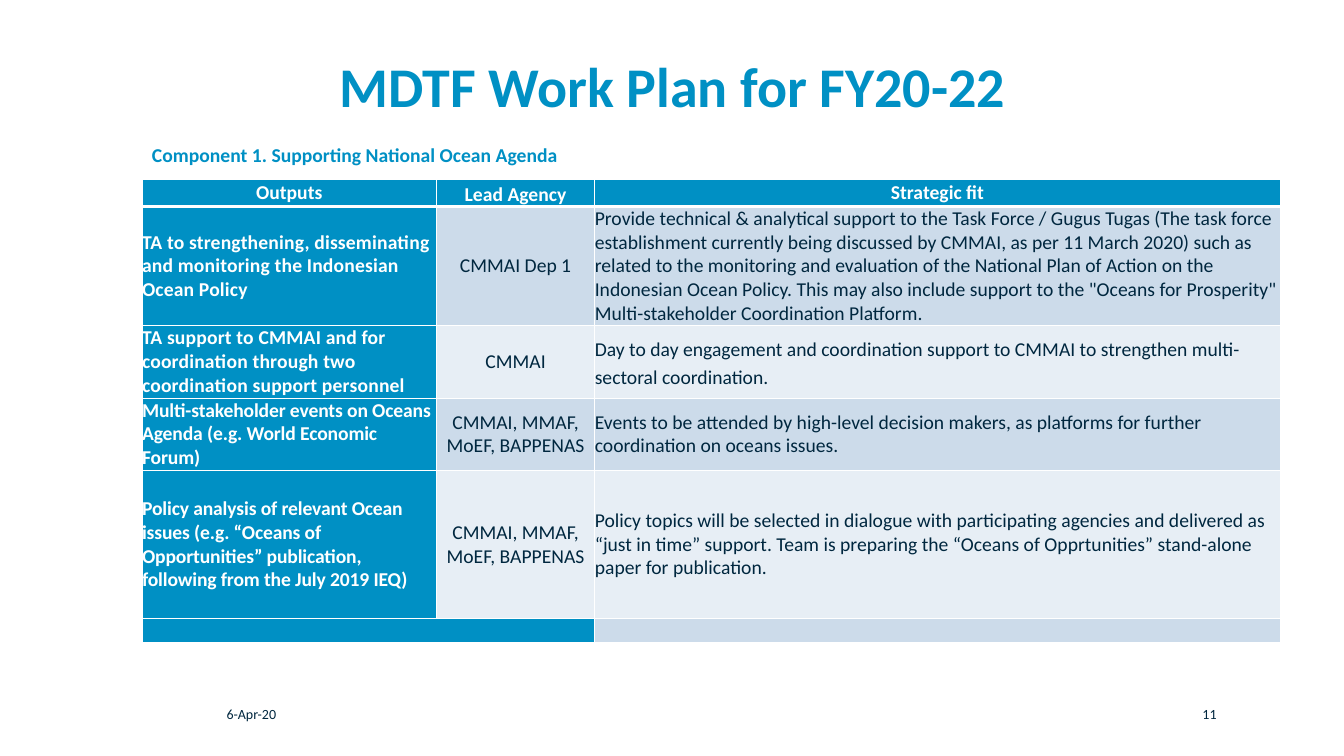
from lxml import etree
from pptx import Presentation
from pptx.dml.color import RGBColor
from pptx.enum.text import MSO_ANCHOR, PP_ALIGN
from pptx.oxml.ns import qn
from pptx.util import Cm, Pt

LEFT, CENTER, RIGHT = PP_ALIGN.LEFT, PP_ALIGN.CENTER, PP_ALIGN.RIGHT
TOP, MIDDLE = MSO_ANCHOR.TOP, MSO_ANCHOR.MIDDLE
TITLE_ONLY = 5
FONT = "Calibri"
COLORS = {"blue": "0090C4", "navy": "00273F", "white": "FFFFFF",
          "band_dark": "CCDBEA", "band_light": "E7EEF5"}

COLUMN_WIDTHS = (7.42, 3.99, 17.27)
ROW_HEIGHTS = (0.66, 3.0, 1.82, 1.82, 3.73, 0.61)
HEADINGS = ("Outputs", "Lead Agency", "Strategic fit")
WORK_PLAN = (
    ("TA to strengthening, disseminating and monitoring the Indonesian Ocean Policy",
     "CMMAI Dep 1",
     "Provide technical & analytical support to the Task Force / Gugus Tugas (The task "
     "force establishment currently being discussed by CMMAI, as per 11 March 2020) such "
     "as related to the monitoring and evaluation of the National Plan of Action on the "
     "Indonesian Ocean Policy. This may also include support to the \"Oceans for "
     "Prosperity\" Multi-stakeholder Coordination Platform."),
    ("TA support to CMMAI and for coordination through two coordination support personnel",
     "CMMAI",
     "Day to day engagement and coordination support to CMMAI to strengthen "
     "multi-sectoral coordination."),
    ("Multi-stakeholder events on Oceans Agenda (e.g. World Economic Forum)",
     "CMMAI, MMAF, MoEF, BAPPENAS",
     "Events to be attended by high-level decision makers, as platforms for further "
     "coordination on oceans issues."),
    ("Policy analysis of relevant Ocean issues (e.g. “Oceans of Opportunities” "
     "publication, following from the July 2019 IEQ)",
     "CMMAI, MMAF, MoEF, BAPPENAS",
     "Policy topics will be selected in dialogue with participating agencies and "
     "delivered as “just in time” support. Team is preparing the “Oceans of "
     "Opprtunities” stand-alone paper for publication."),
    ("", "", ""),
)
OUTPUT_SPACING = (10, 10, -10, -10, 0)  # hundredths of a point
WIDE_LINES = {(0, 1): 1.14, (2, 2): 1.15}


def write(frame, text, size, color, bold=False, align=LEFT, line_spacing=None):
    paragraph = frame.paragraphs[0]
    paragraph.text = text
    paragraph.alignment = align
    paragraph.line_spacing = line_spacing
    font = paragraph.font
    font.name, font.size, font.bold = FONT, Pt(size), bold
    font.color.rgb = RGBColor.from_string(COLORS[color])
    return paragraph


def add_title(slide, left, top, width, height):
    title = slide.shapes.title
    title.left, title.top, title.width, title.height = left, top, width, height
    title.text_frame.vertical_anchor = MIDDLE
    write(title.text_frame, "MDTF Work Plan for FY20-22", 40, "blue", True, CENTER, 0.9)


def add_label(slide, left, top, width, height, text, size, color,
              bold=False, align=LEFT, anchor=TOP, line_spacing=None):
    frame = slide.shapes.add_textbox(left, top, width, height).text_frame
    frame.word_wrap = True
    frame.vertical_anchor = anchor
    write(frame, text, size, color, bold, align, line_spacing)


def set_borders(cell, bottom_width):
    """Draw white cell edges; they precede the fill in the cell properties."""
    properties = cell._tc.get_or_add_tcPr()
    for index, edge in enumerate(("lnL", "lnR", "lnT", "lnB")):
        width = Pt(bottom_width if edge == "lnB" else 1)
        line = etree.Element(qn(f"a:{edge}"), w=str(width))
        fill = etree.SubElement(line, qn("a:solidFill"))
        etree.SubElement(fill, qn("a:srgbClr"), val=COLORS["white"])
        properties.insert(index, line)


def fill_cell(cell, text, row, column):
    emphasised = row == 0 or column == 0
    band = "band_dark" if row % 2 else "band_light"
    cell.fill.solid()
    cell.fill.fore_color.rgb = RGBColor.from_string(COLORS["blue" if emphasised else band])
    cell.margin_left = cell.margin_right = cell.margin_top = cell.margin_bottom = 0
    cell.vertical_anchor = MIDDLE
    set_borders(cell, 1 if row else 3)
    paragraph = write(cell.text_frame, text, 14, "white" if emphasised else "navy",
                      emphasised, CENTER if row == 0 or column == 1 else LEFT,
                      WIDE_LINES.get((row, column)))
    if not text:
        etree.SubElement(paragraph._p, qn("a:endParaRPr"), sz="1400")
    elif row and column == 0:
        run_properties = paragraph.runs[0]._r.get_or_add_rPr()
        run_properties.set("spc", str(OUTPUT_SPACING[row - 1]))


def add_work_plan(slide, left, top, width, height):
    rows = (HEADINGS, *WORK_PLAN)
    table = slide.shapes.add_table(len(rows), len(HEADINGS), left, top, width, height).table
    table.first_row = table.horz_banding = False
    for column, column_width in zip(table.columns, COLUMN_WIDTHS):
        column.width = Cm(column_width)
    for row, row_height in zip(table.rows, ROW_HEIGHTS):
        row.height = Cm(row_height)
    for r, texts in enumerate(rows):
        for c, text in enumerate(texts):
            fill_cell(table.cell(r, c), text, r, c)
    last = len(rows) - 1
    table.cell(last, 0).merge(table.cell(last, 1))


def add_footer(slide, left, top, width, height):
    number_width = Cm(1)
    add_label(slide, left, top, Cm(2.2), height, "6-Apr-20", 10, "navy")
    add_label(slide, left + width - number_width, top, number_width, height,
              "11", 10, "navy", align=RIGHT)


def main():
    presentation = Presentation()
    presentation.slide_width, presentation.slide_height = Cm(33.87), Cm(19.05)
    slide = presentation.slides.add_slide(presentation.slide_layouts[TITLE_ONLY])
    add_title(slide, Cm(4.22), Cm(1.02), Cm(25.45), Cm(2.44))
    add_work_plan(slide, Cm(3.58), Cm(4.52), Cm(sum(COLUMN_WIDTHS)), Cm(sum(ROW_HEIGHTS)))
    add_label(slide, Cm(3.58), Cm(3.45), Cm(12.55), Cm(0.97),
              "Component 1. Supporting National Ocean Agenda", 14, "blue", True,
              anchor=MIDDLE, line_spacing=0.9)
    add_footer(slide, Cm(5.46), Cm(17.65), Cm(25.45), Cm(1.02))
    presentation.save("out.pptx")


if __name__ == "__main__":
    main()
